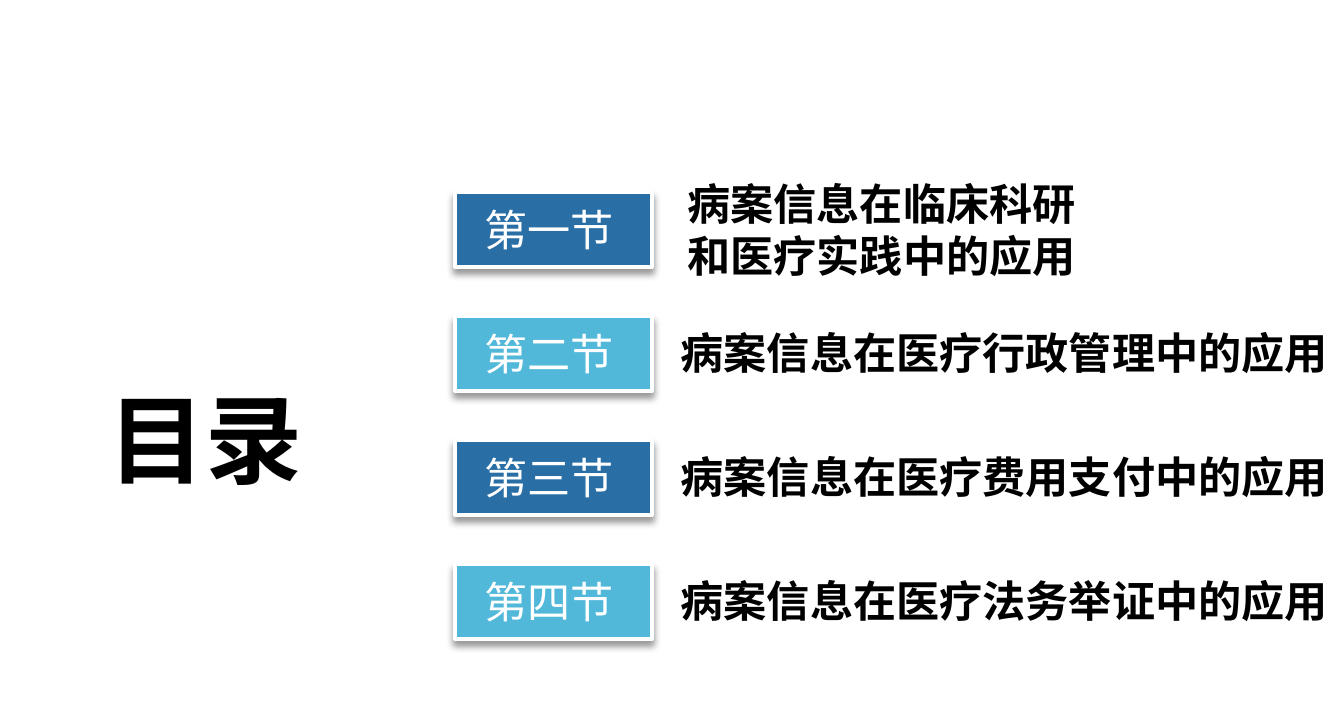
from lxml import etree
from pptx import Presentation
from pptx.dml.color import RGBColor
from pptx.enum.shapes import MSO_SHAPE
from pptx.enum.text import MSO_ANCHOR, PP_ALIGN
from pptx.oxml import parse_xml
from pptx.oxml.ns import nsdecls, qn
from pptx.util import Pt

RECTANGLE = MSO_SHAPE.RECTANGLE
TOP, MIDDLE = MSO_ANCHOR.TOP, MSO_ANCHOR.MIDDLE
LEFT, CENTER = PP_ALIGN.LEFT, PP_ALIGN.CENTER

TITLE = "目录"
SECTIONS = [
    ("第一节 ", "病案信息在临床科研和医疗实践中的应用"),
    ("第二节 ", "病案信息在医疗行政管理中的应用"),
    ("第三节 ", "病案信息在医疗费用支付中的应用"),
    ("第四节 ", "病案信息在医疗法务举证中的应用"),
]
COLORS = {"dark": "296FA5", "light": "52B8DA", "white": "FFFFFF", "black": "000000"}
CJK_FONT, LATIN_FONT = "Noto Sans CJK SC", "Times New Roman"

EMU_PER_PX = 7066
SLIDE_SIZE = (1344, 727)
TITLE_BOX = (96, 373, 232, 131)
BUTTON_LEFT, BUTTON_TOP, BUTTON_WIDTH, BUTTON_HEIGHT = 455, 192, 197, 75
ROW_STEP = 124
LABEL_LEFT, LABEL_WIDTH, LABEL_HEIGHT = 668, 678, 65
WRAPPED_LABEL_BOX = (LABEL_LEFT, 171, 427, 118)

SHADOW = f"""<a:effectLst {nsdecls('a')}>
  <a:outerShdw blurRad="50800" dist="38100" dir="5400000" algn="t" rotWithShape="0">
    <a:srgbClr val="{COLORS['black']}"><a:alpha val="40000"/></a:srgbClr>
  </a:outerShdw>
</a:effectLst>"""


def emu(lengths):
    return [px * EMU_PER_PX for px in lengths]


def color(name):
    return RGBColor.from_string(COLORS[name])


def write(shape, text, size, font_name, color_name, bold, align, anchor, wrap=True):
    frame = shape.text_frame
    frame.word_wrap = wrap
    frame.vertical_anchor = anchor
    para = frame.paragraphs[0]
    para.text = text
    para.alignment = align
    font = para.font
    font.size, font.bold, font.name = Pt(size), bold, font_name
    font.color.rgb = color(color_name)
    east_asian = etree.Element(qn("a:ea"), typeface=CJK_FONT)
    para._p.pPr.find(qn("a:defRPr")).find(qn("a:latin")).addnext(east_asian)


def add_button(slide, text, top, fill_name):
    box = (BUTTON_LEFT, top, BUTTON_WIDTH, BUTTON_HEIGHT)
    button = slide.shapes.add_shape(RECTANGLE, *emu(box))
    button.fill.solid()
    button.fill.fore_color.rgb = color(fill_name)
    button.line.color.rgb = color("white")
    button.line.width = Pt(2.25)
    button._element.spPr.append(parse_xml(SHADOW))
    write(button, text, 24, LATIN_FONT, "white", False, CENTER, MIDDLE)


def add_label(slide, text, box, align):
    label = slide.shapes.add_textbox(*emu(box))
    write(label, text, 24, LATIN_FONT, "black", True, align, TOP)


def main():
    deck = Presentation()
    deck.slide_width, deck.slide_height = emu(SLIDE_SIZE)
    slide = deck.slides.add_slide(deck.slide_layouts[5])

    title = slide.shapes.title
    title.left, title.top, title.width, title.height = emu(TITLE_BOX)
    write(title, TITLE, 54, CJK_FONT, "black", True, LEFT, TOP, wrap=False)

    for row, (number, topic) in enumerate(SECTIONS):
        top = BUTTON_TOP + row * ROW_STEP
        add_button(slide, number, top, "light" if row % 2 else "dark")
        if row == 0:
            add_label(slide, topic, WRAPPED_LABEL_BOX, CENTER)
        else:
            label_box = (LABEL_LEFT, top + 4, LABEL_WIDTH, LABEL_HEIGHT)
            add_label(slide, topic, label_box, LEFT)

    deck.save("out.pptx")


if __name__ == "__main__":
    main()
